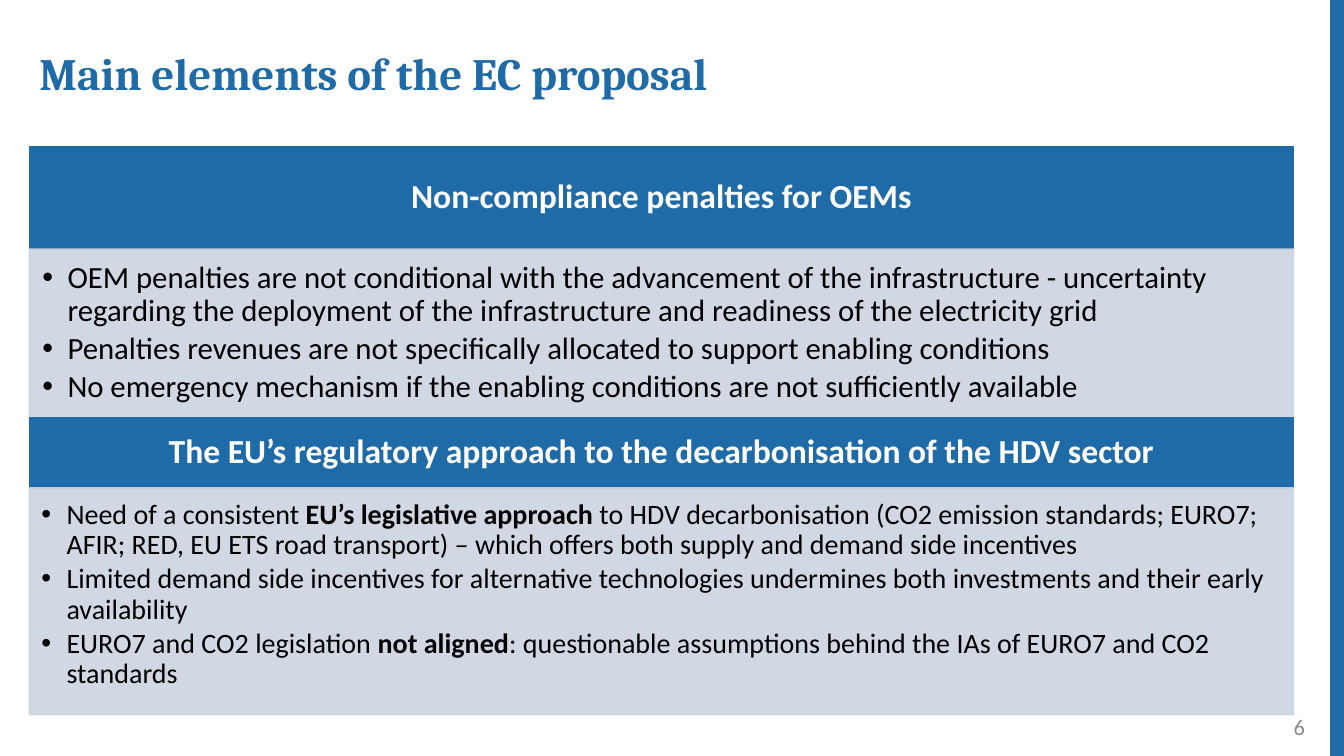
from dataclasses import dataclass

from lxml.etree import SubElement
from pptx import Presentation
from pptx.dml.color import RGBColor
from pptx.enum.shapes import MSO_CONNECTOR, MSO_SHAPE
from pptx.enum.text import MSO_ANCHOR, MSO_AUTO_SIZE, PP_ALIGN
from pptx.oxml.ns import qn
from pptx.util import Inches, Pt


@dataclass(frozen=True)
class Theme:
    """Colours, fonts and type sizes of the deck."""
    blue: RGBColor = RGBColor(0x1F, 0x6B, 0xA7)
    pale: RGBColor = RGBColor(0xCD, 0xD4, 0xE1)
    black: RGBColor = RGBColor(0, 0, 0)
    white: RGBColor = RGBColor(0xFF, 0xFF, 0xFF)
    grey: RGBColor = RGBColor(0x8C, 0x8C, 0x8C)
    head_font: str = "Cambria"
    body_font: str = "Calibri"
    title: int = 32
    heading: int = 24
    number: int = 16
    line_spacing: float = 0.9


T = Theme()
SLIDE_W, SLIDE_H = 13.33, 7.5
LEFT, WIDTH = 0.29, 12.54

PENALTIES = [
    [("OEM penalties are not conditional with the advancement of the infrastructure - "
      "uncertainty regarding the deployment of the infrastructure and readiness of the "
      "electricity grid", False)],
    [("Penalties revenues are not specifically allocated to support enabling conditions", False)],
    [("No emergency mechanism if the enabling conditions are not sufficiently available", False)],
]
APPROACH = [
    [("Need of a consistent ", False), ("EU’s legislative approach ", True),
     ("to HDV decarbonisation (CO2 emission standards; EURO7; AFIR; RED, EU ETS road "
      "transport) – which offers both supply and demand side incentives", False)],
    [("Limited demand side incentives for alternative technologies undermines both "
      "investments and their early availability", False)],
    [("EURO7 and CO2 legislation ", False), ("not aligned", True),
     (": questionable assumptions behind the IAs of EURO7 and CO2 standards", False)],
]


def add_run(p, text, size, color, font=T.body_font, bold=False):
    """Append one formatted run to a paragraph."""
    r = p.add_run()
    r.text = text
    r.font.name, r.font.size, r.font.bold = font, Pt(size), bold
    r.font.color.rgb = color


def set_frame(tf, anchor, insets):
    """Wrap a text frame and set its anchor and its four insets."""
    tf.word_wrap = True
    tf.auto_size = MSO_AUTO_SIZE.NONE
    tf.vertical_anchor = anchor
    tf.margin_left, tf.margin_top, tf.margin_right, tf.margin_bottom = map(Inches, insets)


def add_bullet(p):
    """Give a paragraph a hanging round bullet."""
    pPr = p._p.get_or_add_pPr()
    pPr.set("marL", str(Inches(0.25)))
    pPr.set("indent", str(-Inches(0.25)))
    SubElement(pPr, qn("a:buFont")).set("typeface", "Arial")
    SubElement(pPr, qn("a:buChar")).set("char", "•")


def add_panel(s, top, height, color, alpha=None):
    """Add a full-width rectangle, optionally translucent."""
    sp = s.shapes.add_shape(MSO_SHAPE.RECTANGLE, Inches(LEFT), Inches(top),
                            Inches(WIDTH), Inches(height))
    sp.shadow.inherit = False
    sp.fill.solid()
    sp.fill.fore_color.rgb = color
    sp.line.color.rgb = color
    sp.line.width = Pt(1)
    if alpha:
        for clr in sp._element.spPr.findall(".//" + qn("a:srgbClr")):
            SubElement(clr, qn("a:alpha")).set("val", str(alpha * 1000))
    return sp


def add_section(s, top, head_h, body_h, heading, bullets, size, insets):
    """Add a heading bar with a bulleted panel below it."""
    tf = add_panel(s, top, head_h, T.blue).text_frame
    set_frame(tf, MSO_ANCHOR.MIDDLE, (0.19, 0.11, 0.19, 0.11))
    p = tf.paragraphs[0]
    p.alignment, p.line_spacing = PP_ALIGN.CENTER, T.line_spacing
    add_run(p, heading, T.heading, T.white, bold=True)

    tf = add_panel(s, top + head_h, body_h, T.pale, alpha=90).text_frame
    set_frame(tf, MSO_ANCHOR.TOP, insets)
    for i, runs in enumerate(bullets):
        p = tf.add_paragraph() if i else tf.paragraphs[0]
        p.level, p.alignment = 1, PP_ALIGN.LEFT
        p.line_spacing, p.space_after = T.line_spacing, Pt(size * 0.15)
        add_bullet(p)
        for text, bold in runs:
            add_run(p, text, size, T.black, bold=bold)


def add_title(s, text):
    """Place and fill the title placeholder."""
    sp = s.shapes.title
    sp.left, sp.top = Inches(LEFT), Inches(0.46)
    sp.width, sp.height = Inches(11.96), Inches(0.58)
    set_frame(sp.text_frame, MSO_ANCHOR.MIDDLE, (0.1, 0.05, 0.1, 0.05))
    p = sp.text_frame.paragraphs[0]
    p.alignment, p.line_spacing = PP_ALIGN.LEFT, T.line_spacing
    add_run(p, text, T.title, T.blue, T.head_font, True)


def add_edge(s):
    """Draw the thick line down the right edge."""
    x = Inches(13.27)
    cn = s.shapes.add_connector(MSO_CONNECTOR.STRAIGHT, x, 0, x, Inches(SLIDE_H))
    cn.line.color.rgb = T.blue
    cn.line.width = Pt(12)
    SubElement(cn._element.spPr, qn("a:effectLst"))


def add_number(s, number):
    """Write the page number at the bottom right."""
    tf = s.shapes.add_textbox(Inches(10.04), Inches(7.01), Inches(3), Inches(0.4)).text_frame
    set_frame(tf, MSO_ANCHOR.MIDDLE, (0.1, 0.05, 0.1, 0.05))
    p = tf.paragraphs[0]
    p.alignment = PP_ALIGN.RIGHT
    add_run(p, number, T.number, T.grey)


def main():
    """Build the slide and save the deck."""
    prs = Presentation()
    prs.slide_width, prs.slide_height = Inches(SLIDE_W), Inches(SLIDE_H)
    s = prs.slides.add_slide(prs.slide_layouts[5])
    add_edge(s)
    add_title(s, "Main elements of the EC proposal")
    add_number(s, "6")
    add_section(s, 1.46, 1.01, 1.78, "Non-compliance penalties for OEMs",
                PENALTIES, 22, (0.13, 0.13, 0.17, 0.19))
    add_section(s, 4.14, 0.7, 2.25,
                "The EU’s regulatory approach to the decarbonisation of the HDV sector",
                APPROACH, 20, (0.12, 0.12, 0.16, 0.17))
    prs.save("out.pptx")


if __name__ == "__main__":
    main()
